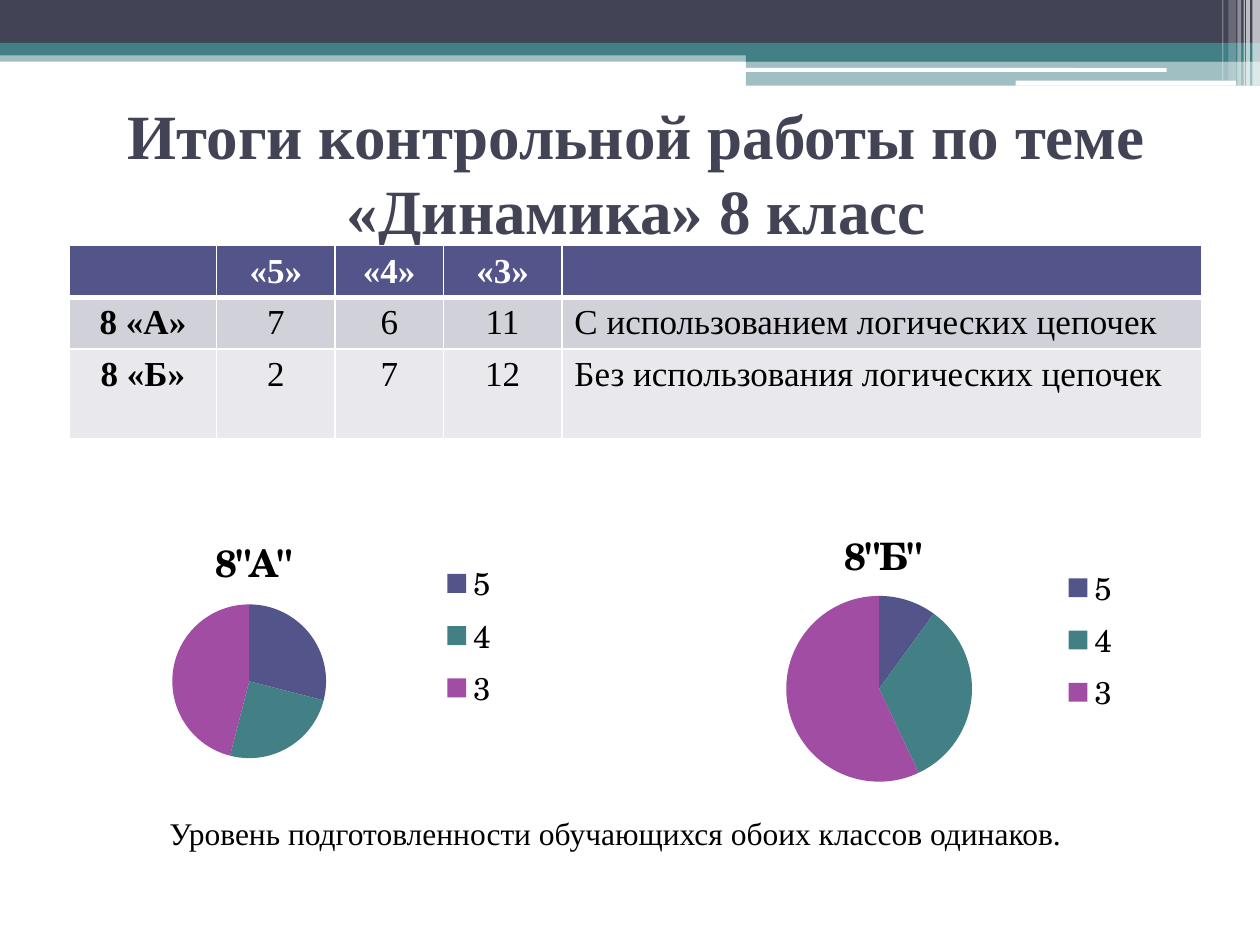
"""Build the test results slide with a table and two pie charts."""
from dataclasses import dataclass
from typing import Optional

from lxml.etree import SubElement
from pptx import Presentation
from pptx.chart.data import CategoryChartData
from pptx.dml.color import RGBColor
from pptx.enum.chart import XL_CHART_TYPE as ChartType, XL_LEGEND_POSITION as LegendPosition
from pptx.enum.shapes import MSO_SHAPE as Preset
from pptx.enum.text import MSO_ANCHOR as Anchor, PP_ALIGN as Align
from pptx.oxml import parse_xml
from pptx.oxml.ns import nsdecls, qn
from pptx.util import Inches, Pt

COLUMNS, ROWS = 1000, 750
WIDTH, HEIGHT = Inches(10), Inches(7.5)
COLORS = {
    "white": "FFFFFF", "black": "000000", "slate": "424456", "indigo": "53548A",
    "teal": "438086", "purple": "A04DA3", "band": "D1D1DA", "light": "E9E9ED",
}
SERIF, CHART_FONT = "Times New Roman", "TeX Gyre Schola"


@dataclass(frozen=True)
class Area:
    """A rectangle in grid columns and rows."""
    left: float
    top: float
    width: float
    height: float

    def place(self) -> tuple:
        return across(self.left), down(self.top), across(self.width), down(self.height)


@dataclass(frozen=True)
class Bar:
    """A bar of the page header."""
    area: Area
    color: str
    opacity: int = 100
    preset: Preset = Preset.RECTANGLE


@dataclass(frozen=True)
class Pie:
    """A pie chart with the plot and title given as shares of its area."""
    name: str
    values: tuple
    area: Area
    plot: tuple
    title: tuple


def across(columns: float) -> int:
    return round(WIDTH * columns / COLUMNS)


def down(rows: float) -> int:
    return round(HEIGHT * rows / ROWS)


def rgb(name: str) -> RGBColor:
    return RGBColor.from_string(COLORS[name])


def style_font(font, size: float, color: str, bold: bool = False, name: str = SERIF) -> None:
    font.size, font.bold, font.name = Pt(size), bold, name
    font.color.rgb = rgb(color)


def write(frame, text: str, *, align: Optional[Align] = Align.CENTER, **style) -> None:
    para = frame.paragraphs[0]
    para.alignment = align
    span = para.add_run()
    span.text = text
    style_font(span.font, **style)


def draw_bar(page, bar: Bar) -> None:
    shape = page.shapes.add_shape(bar.preset, *bar.area.place())
    shape.shadow.inherit = False
    shape.fill.solid()
    shape.fill.fore_color.rgb = rgb(bar.color)
    shape.line.fill.background()
    if bar.opacity < 100:
        color = shape.fill._xPr.find(qn("a:solidFill"))[0]
        SubElement(color, qn("a:alpha")).set("val", str(bar.opacity * 1000))


def set_borders(cell, bottom: int) -> None:
    properties = cell._tc.get_or_add_tcPr()
    for index, side in enumerate("LRTB"):
        width = Pt(bottom if side == "B" else 1)
        properties.insert(index, parse_xml(
            f'<a:ln{side} {nsdecls("a")} w="{width}"><a:solidFill>'
            f'<a:srgbClr val="{COLORS["white"]}"/></a:solidFill></a:ln{side}>'))


def draw_table(page, area: Area, widths: tuple, heights: tuple, rows: tuple) -> None:
    table = page.shapes.add_table(len(heights), len(widths), *area.place()).table
    for column, width in zip(table.columns, widths):
        column.width = across(width)
    for row, height in zip(table.rows, heights):
        row.height = down(height)
    for r, (fill, texts) in enumerate(zip(("indigo", "band", "light"), rows)):
        for c, text in enumerate(texts):
            cell = table.cell(r, c)
            cell.fill.solid()
            cell.fill.fore_color.rgb = rgb(fill)
            set_borders(cell, bottom=1 if r else 3)
            if text:
                write(cell.text_frame, text, size=20, color="black" if r else "white",
                      bold=r == 0 or c == 0,
                      align=Align.LEFT if c == len(texts) - 1 else Align.CENTER)


def set_layout(element, after: str, shares: tuple, target: str = "") -> None:
    for old in element.findall(qn("c:layout")):
        element.remove(old)
    values = "".join(f'<c:{key} val="{share}"/>' for key, share in zip("xywh", shares))
    layout = parse_xml(
        f'<c:layout {nsdecls("c")}><c:manualLayout>{target}<c:xMode val="edge"/>'
        f'<c:yMode val="edge"/>{values}</c:manualLayout></c:layout>')
    previous = element.find(qn(after)) if after else None
    element.insert(0 if previous is None else element.index(previous) + 1, layout)


def draw_pie(page, pie: Pie) -> None:
    data = CategoryChartData()
    data.categories = ["5", "4", "3"]
    data.add_series(pie.name, pie.values)
    chart = page.shapes.add_chart(ChartType.PIE, *pie.area.place(), data).chart
    style_font(chart.font, 18, "black", name=CHART_FONT)
    chart.has_title = True
    write(chart.chart_title.text_frame, pie.name, size=21.6, color="black",
          bold=True, name=CHART_FONT, align=None)
    chart.chart_title.include_in_layout = False
    chart.has_legend = True
    chart.legend.position = LegendPosition.RIGHT
    chart.legend.include_in_layout = False
    chart.plots[0].vary_by_categories = True
    for index, color in enumerate(("indigo", "teal", "purple")):
        fill = chart.plots[0].series[0].points[index].format.fill
        fill.solid()
        fill.fore_color.rgb = rgb(color)
    set_layout(chart.chart_title._element, "c:tx", pie.title)
    set_layout(chart._chartSpace.chart.plotArea, "", pie.plot,
               '<c:layoutTarget val="inner"/>')


BARS = (
    Bar(Area(0, 40, 1000, 9), "teal", 50),
    Bar(Area(0, 0, 1000, 34), "slate"),
    Bar(Area(0, 34, 1000, 10), "teal"),
    Bar(Area(592, 39, 408, 10), "teal"),
    Bar(Area(592, 48, 408, 20), "teal", 50),
    Bar(Area(591, 54, 335, 3), "white", preset=Preset.ROUNDED_RECTANGLE),
    Bar(Area(806, 64, 175, 4), "white", preset=Preset.ROUNDED_RECTANGLE),
    *(Bar(Area(left, 0, width, height), "white", opacity)
      for left, width, height, opacity in (
          (994, 6, 68, 65), (989, 3, 68, 65), (987, 1, 68, 60),
          (982, 3, 68, 40), (975, 6, 64, 20), (970, 1, 64, 30))),
)
PIES = (
    Pie('8"А"', (29, 25, 46), Area(47, 391, 359, 227), (0.25, 0.39, 0.34, 0.54), (0.33, 0.1)),
    Pie('8"Б"', (10, 33, 57), Area(555, 383, 344, 250), (0.2, 0.36, 0.43, 0.59), (0.32, 0.1)),
)
RESULTS = (
    ("", "«5»", "«4»", "«3»", ""),
    ("8 «А»", "7", "6", "11", "С использованием логических цепочек"),
    ("8 «Б»", "2", "7", "12", "Без использования логических цепочек"),
)


def main() -> None:
    deck = Presentation()
    deck.slide_width, deck.slide_height = WIDTH, HEIGHT
    page = deck.slides.add_slide(deck.slide_layouts[5])
    for bar in BARS:
        draw_bar(page, bar)
    title = page.shapes.title
    title.left, title.top, title.width, title.height = Area(55, 78, 900, 117).place()
    title.text_frame.vertical_anchor = Anchor.MIDDLE
    write(title.text_frame, "Итоги контрольной работы по теме «Динамика» 8 класс",
          size=36, color="slate", bold=True)
    for pie in PIES:
        draw_pie(page, pie)
    draw_table(page, Area(55, 195, 899, 153), (117, 94, 86, 94, 508), (41, 41, 71), RESULTS)
    note = page.shapes.add_textbox(*Area(47, 641, 883, 40).place()).text_frame
    note.word_wrap = True
    write(note, "Уровень подготовленности обучающихся обоих классов одинаков.",
          size=18, color="black")
    deck.save("out.pptx")


if __name__ == "__main__":
    main()
